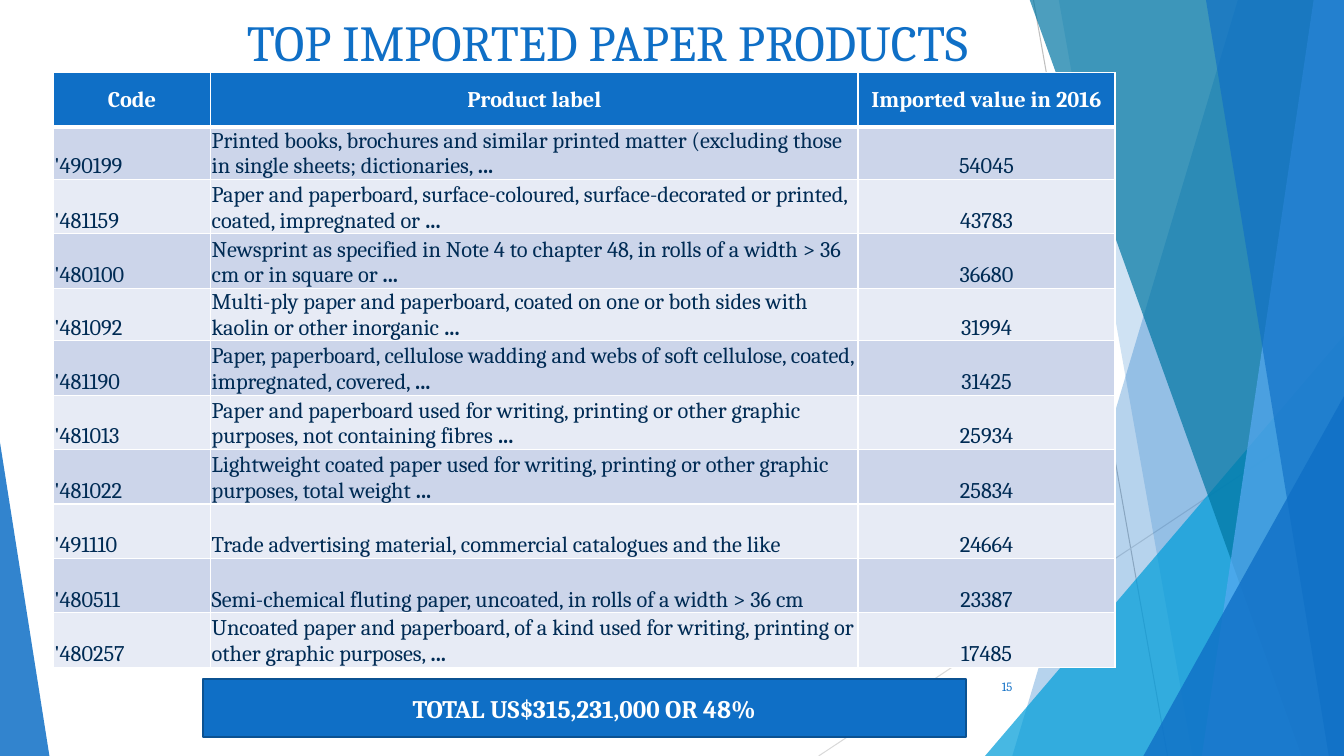
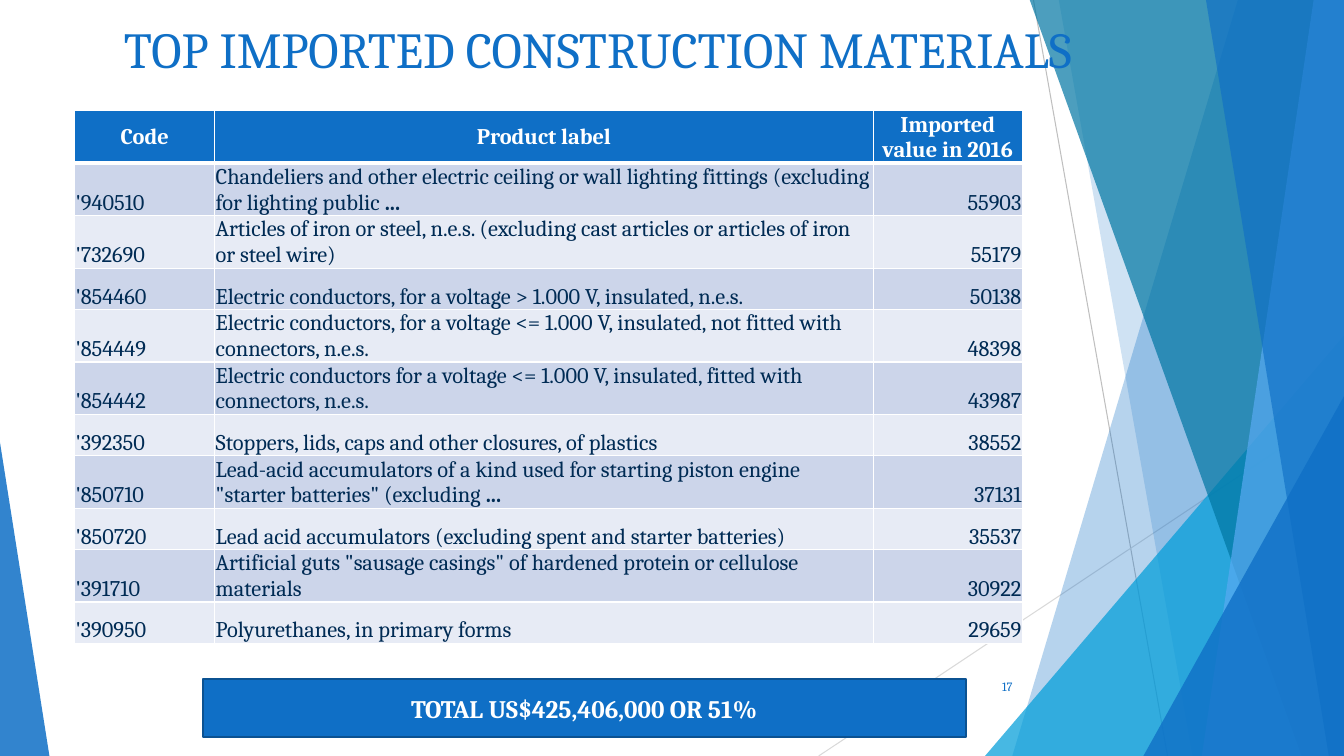
"""Build two slides of top imports, each with a table and a total."""
from lxml import etree
from pptx import Presentation
from pptx.dml.color import RGBColor
from pptx.enum.shapes import MSO_CONNECTOR, MSO_SHAPE, PP_PLACEHOLDER
from pptx.enum.text import MSO_ANCHOR, MSO_AUTO_SIZE, PP_ALIGN
from pptx.oxml.ns import qn
from pptx.util import Inches, Pt

LEFT, CENTER, RIGHT = PP_ALIGN.LEFT, PP_ALIGN.CENTER, PP_ALIGN.RIGHT
MIDDLE, BOTTOM = MSO_ANCHOR.MIDDLE, MSO_ANCHOR.BOTTOM
TRIANGLE, RECTANGLE = MSO_SHAPE.RIGHT_TRIANGLE, MSO_SHAPE.RECTANGLE
ISOSCELES, STRAIGHT = MSO_SHAPE.ISOSCELES_TRIANGLE, MSO_CONNECTOR.STRAIGHT

FONT = "Cambria"
BLUE = RGBColor(0x0F, 0x6F, 0xC6)
EDGE_BLUE = RGBColor(0x0B, 0x52, 0x92)
CYAN = RGBColor(0x00, 0x9D, 0xD9)
TEAL = RGBColor(0x00, 0x76, 0xA3)
SKY = RGBColor(0x59, 0xAA, 0xF2)
NAVY = RGBColor(0x00, 0x2B, 0x54)
WHITE = RGBColor(0xFF, 0xFF, 0xFF)
GRAY = RGBColor(0xBF, 0xBF, 0xBF)
PALE_GRAY = RGBColor(0xD9, 0xD9, 0xD9)
BANDS = [RGBColor(0xCC, 0xD5, 0xEA), RGBColor(0xE7, 0xEB, 0xF5)]

WIDTH, HEIGHT = 13.33, 7.5
HEADINGS = ("Code", "Product label", "Imported value in 2016")

RAYS = [((10.25, 0), (11.58, 7.5), GRAY), ((13.33, 4.03), (8.12, 7.5), PALE_GRAY)]
SWEEP, PEAK = "sweep", "peak"
PANELS = [
    (SWEEP, (12.28, 10.04), BLUE, 30),
    (SWEEP, (10.5, 11.83), BLUE, 20),
    (PEAK, (9.77, 3.33, 3.56, 1), CYAN, 72),
    (SWEEP, (10.21, 12.91), TEAL, 70),
    (SWEEP, (13.03, 11.92), SKY, 70),
    (SWEEP, (11.96, 13.18), BLUE, 65),
    (PEAK, (11.34, 3.93, 1.99, 1), BLUE, 80),
    (PEAK, (0, 4.39, 0.49, 0), BLUE, 85),
]

PAPER = [
    ("'490199", "Printed books, brochures and similar printed matter (excluding those in single sheets; dictionaries, ...", "54045"),
    ("'481159", "Paper and paperboard, surface-coloured, surface-decorated or printed, coated, impregnated or ...", "43783"),
    ("'480100", "Newsprint as specified in Note 4 to chapter 48, in rolls of a width > 36 cm or in square or ...", "36680"),
    ("'481092", "Multi-ply paper and paperboard, coated on one or both sides with kaolin or other inorganic ...", "31994"),
    ("'481190", "Paper, paperboard, cellulose wadding and webs of soft cellulose, coated, impregnated, covered, ...", "31425"),
    ("'481013", "Paper and paperboard used for writing, printing or other graphic purposes, not containing fibres ...", "25934"),
    ("'481022", "Lightweight coated paper used for writing, printing or other graphic purposes, total weight ...", "25834"),
    ("'491110", "Trade advertising material, commercial catalogues and the like", "24664"),
    ("'480511", "Semi-chemical fluting paper, uncoated, in rolls of a width > 36 cm", "23387"),
    ("'480257", "Uncoated paper and paperboard, of a kind used for writing, printing or other graphic purposes, ...", "17485"),
]
CONSTRUCTION = [
    ("'940510", "Chandeliers and other electric ceiling or wall lighting fittings (excluding for lighting public ...", "55903"),
    ("'732690", "Articles of iron or steel, n.e.s. (excluding cast articles or articles of iron or steel wire)", "55179"),
    ("'854460", "Electric conductors, for a voltage > 1.000 V, insulated, n.e.s.", "50138"),
    ("'854449", "Electric conductors, for a voltage <= 1.000 V, insulated, not fitted with connectors, n.e.s.", "48398"),
    ("'854442", "Electric conductors for a voltage <= 1.000 V, insulated, fitted with connectors, n.e.s.", "43987"),
    ("'392350", "Stoppers, lids, caps and other closures, of plastics", "38552"),
    ("'850710", "Lead-acid accumulators of a kind used for starting piston engine \"starter batteries\" (excluding ...", "37131"),
    ("'850720", "Lead acid accumulators (excluding spent and starter batteries)", "35537"),
    ("'391710", "Artificial guts \"sausage casings\" of hardened protein or cellulose materials", "30922"),
    ("'390950", "Polyurethanes, in primary forms", "29659"),
]
IMPORTS = [
    dict(title="TOP IMPORTED PAPER PRODUCTS ", title_at=(-0.35, 0.04), rows=PAPER,
         table_at=(0.53, 0.72), columns=(1.56, 6.42, 2.55), value_align=CENTER,
         heights=[0.4 if row in (1, 4) else 0.54 for row in range(11)],
         total="TOTAL US$315,231,000 OR 48%", number="15"),
    dict(title="TOP IMPORTED CONSTRUCTION MATERIALS", title_at=(-0.5, 0.1), rows=CONSTRUCTION,
         table_at=(0.74, 1.1), columns=(1.39, 6.53, 1.48), value_align=RIGHT,
         heights=[0.41] * 11,
         total="TOTAL US$425,406,000 OR 51%", number="17"),
]


def write(frame, text, size=16, color=NAVY, bold=False, align=LEFT, anchor=MIDDLE):
    """Fill a text frame with one paragraph, its ellipsis in bold."""
    frame.word_wrap = True
    frame.vertical_anchor = anchor
    paragraph = frame.paragraphs[0]
    paragraph.alignment = align
    for part in filter(None, text.partition("...")):
        run = paragraph.add_run()
        run.text = part
        run.font.name = FONT
        run.font.size = Pt(size)
        run.font.bold = bold or part == "..."
        run.font.color.rgb = color


def paint(shape, color, opacity=100):
    """Give a shape a flat, outline-free fill of the given opacity."""
    shape.shadow.inherit = False
    shape.line.fill.background()
    shape.fill.solid()
    shape.fill.fore_color.rgb = color
    if opacity < 100:
        tone = shape.fill._xPr.find(qn("a:solidFill"))[0]
        etree.SubElement(tone, qn("a:alpha"), val=str(opacity * 1000))


prs = Presentation()
prs.slide_width, prs.slide_height = Inches(WIDTH), Inches(HEIGHT)
layout = prs.slide_layouts[5]
for placeholder in list(layout.placeholders):
    if placeholder.placeholder_format.type != PP_PLACEHOLDER.TITLE:
        layout.shapes.element.remove(placeholder.element)
slides = [prs.slides.add_slide(layout) for _ in IMPORTS]

canvas = slides[0].shapes
backdrop = []
for start, end, color in RAYS:
    ray = canvas.add_connector(STRAIGHT, *map(Inches, start + end))
    ray.line.color.rgb = color
    ray.line.width = Pt(0.75)
    etree.SubElement(ray.element.spPr, qn("a:effectLst"))
    backdrop.append(ray)
for kind, geometry, color, opacity in PANELS:
    if kind == SWEEP:
        top_x, bottom_x = geometry
        outline = canvas.build_freeform(Inches(top_x), Inches(-0.01))
        corners = [(WIDTH, -0.01), (WIDTH, HEIGHT), (bottom_x, HEIGHT)]
        outline.add_line_segments([(Inches(x), Inches(y)) for x, y in corners])
        panel = outline.convert_to_shape()
    else:
        left, top, width, apex = geometry
        panel = canvas.add_shape(ISOSCELES, *map(Inches, (left, top, width, HEIGHT - top)))
        panel.adjustments[0] = apex
    paint(panel, color, opacity)
    backdrop.append(panel)
for piece in backdrop:
    layout.shapes.element.append(piece.element)

for slide, page in zip(slides, IMPORTS):
    title = slide.shapes.title
    title.left, title.top = map(Inches, page["title_at"])
    title.width, title.height = Inches(12.86), Inches(0.75)
    title.text_frame.auto_size = MSO_AUTO_SIZE.NONE
    write(title.text_frame, page["title"], size=36, color=BLUE, align=CENTER)

    records = [HEADINGS] + page["rows"]
    extent = (sum(page["columns"]), sum(page["heights"]))
    table = slide.shapes.add_table(
        len(records), len(HEADINGS), *map(Inches, page["table_at"] + extent)).table
    for column, width in zip(table.columns, page["columns"]):
        column.width = Inches(width)
    for row, height in zip(table.rows, page["heights"]):
        row.height = Inches(height)
    aligns = (LEFT, LEFT, page["value_align"])
    for r, record in enumerate(records):
        for c, text in enumerate(record):
            cell = table.cell(r, c)
            cell.margin_left = cell.margin_right = cell.margin_top = Inches(0.01)
            cell.margin_bottom = 0
            for side in "LRTB":
                thick = (r, side) in ((0, "B"), (1, "T"))
                border = etree.SubElement(cell._tc.get_or_add_tcPr(), qn(f"a:ln{side}"),
                                          w=str(Pt(3 if thick else 1)))
                ink = etree.SubElement(border, qn("a:solidFill"))
                etree.SubElement(ink, qn("a:srgbClr"), val=str(WHITE))
            cell.fill.solid()
            cell.fill.fore_color.rgb = BANDS[(r - 1) % 2] if r else BLUE
            if r:
                write(cell.text_frame, text, align=aligns[c])
            else:
                write(cell.text_frame, text, color=WHITE, bold=True, align=CENTER)
            cell.vertical_anchor = BOTTOM if r else MIDDLE

    total = slide.shapes.add_shape(RECTANGLE, *map(Inches, (2.01, 6.74, 7.57, 0.57)))
    paint(total, BLUE)
    total.line.color.rgb = EDGE_BLUE
    total.line.width = Pt(1.5)
    write(total.text_frame, page["total"], size=18, color=WHITE, bold=True, align=CENTER)

    number = slide.shapes.add_textbox(*map(Inches, (9.39, 6.61, 0.75, 0.4)))
    write(number.text_frame, page["number"], size=9, color=BLUE, align=RIGHT)

prs.save("out.pptx")
